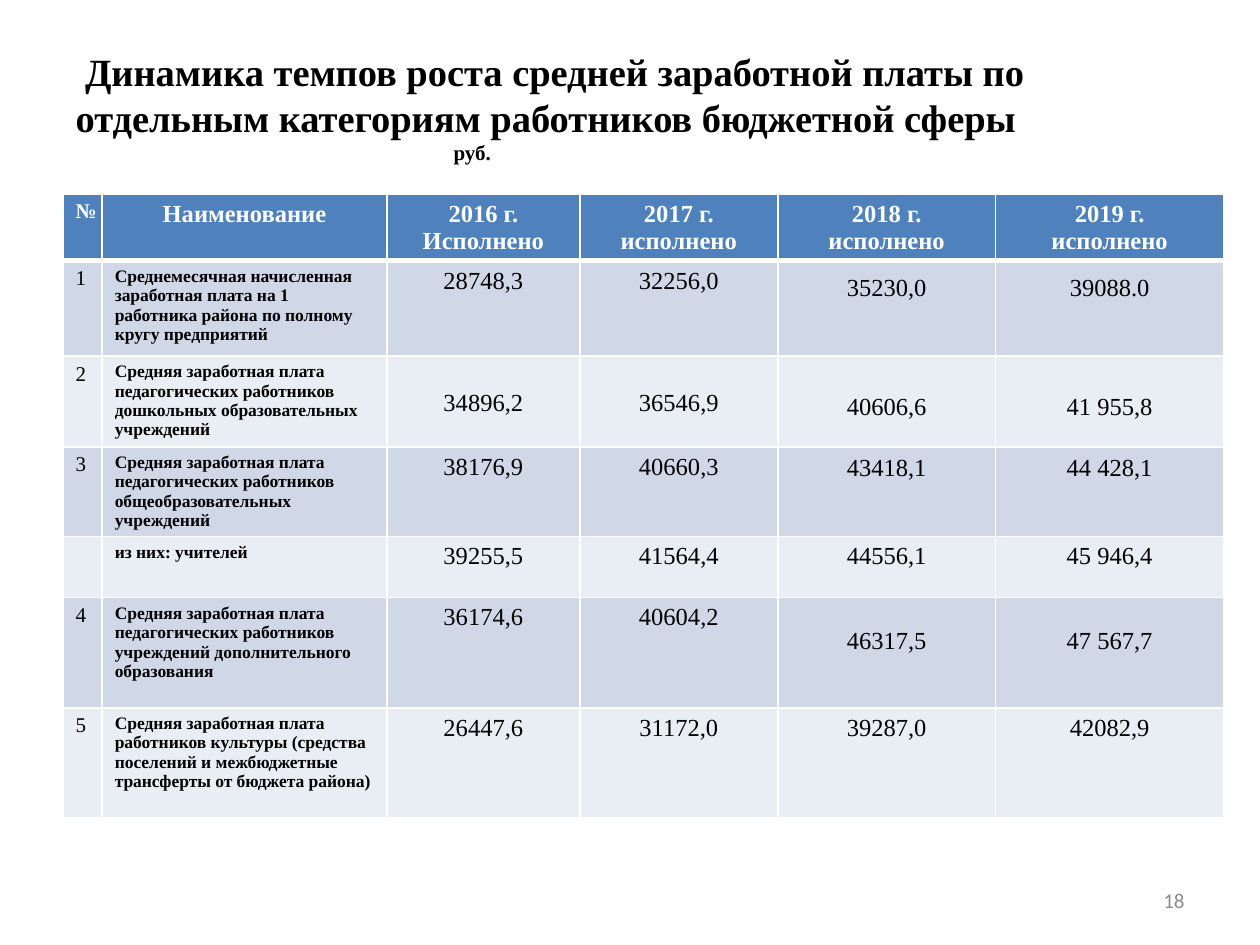
from dataclasses import dataclass
from lxml.etree import SubElement
from pptx import Presentation
from pptx.dml.color import RGBColor
from pptx.enum.text import MSO_ANCHOR, PP_ALIGN
from pptx.oxml.ns import qn
from pptx.util import Cm, Pt


@dataclass(frozen=True)
class Theme:
    serif: str = "Times New Roman"
    sans: str = "Calibri"
    ink: str = "000000"
    white: str = "FFFFFF"
    grey: str = "8C8C8C"
    head: str = "4F81BD"
    bands: tuple = ("D0D8E8", "E9EDF4")
    title: int = 22
    value: int = 14
    small: int = 12
    label: int = 10


T = Theme()
PAD = 0.13
WIDTHS = (0.79, 5.74, 3.89, 3.99, 4.39, 4.6)
HEAD_H = 1.32
HEADS = ("№", "Наименование", "2016 г. Исполнено", "2017 г. исполнено",
         "2018 г.\nисполнено", "2019 г.\nисполнено")
# Row height, top margins of the early and late years, cell texts
ROWS = (
    (1.92, PAD, 0.28, ("1", "Среднемесячная начисленная заработная плата на 1 "
     "работника района по полному кругу предприятий",
     "28748,3", "32256,0", "35230,0", "39088.0")),
    (1.83, 0.68, 0.75, ("2", "Средняя заработная плата педагогических работников "
     "дошкольных образовательных учреждений",
     "34896,2", "36546,9", "40606,6", "41 955,8")),
    (1.81, PAD, 0.15, ("3", "Средняя заработная плата педагогических работников "
     "общеобразовательных учреждений",
     "38176,9", "40660,3", "43418,1", "44 428,1")),
    (1.23, PAD, PAD, ("", "из них: учителей",
     "39255,5", "41564,4", "44556,1", "45 946,4")),
    (2.22, PAD, 0.6, ("4", "Средняя заработная плата педагогических работников "
     "учреждений дополнительного образования",
     "36174,6", "40604,2", "46317,5", "47 567,7")),
    (2.22, PAD, PAD, ("5", "Средняя заработная плата работников культуры (средства "
     "поселений и межбюджетные трансферты от бюджета района)",
     "26447,6", "31172,0", "39287,0", "42082,9")),
)


def apply(obj, form):
    for key, val in form.items():
        setattr(obj, key, val)


def write(frame, text, size, color, bold=False, align=PP_ALIGN.LEFT, face=T.serif):
    frame.text = text
    for para in frame.paragraphs:
        para.alignment = align
        for run in para.runs:
            apply(run.font, {"name": face, "size": Pt(size), "bold": bold})
            run.font.color.rgb = RGBColor.from_string(color)


def place(shape, box):
    apply(shape, dict(zip(("left", "top", "width", "height"), map(Cm, box))))


def add_title(slide, box):
    shape = slide.shapes.title
    place(shape, box)
    frame = shape.text_frame
    write(frame, "Динамика темпов роста средней заработной платы по отдельным "
          "категориям работников бюджетной сферы\nруб.", T.title, T.ink, True)
    apply(frame, {"word_wrap": True, "vertical_anchor": MSO_ANCHOR.MIDDLE})
    main, unit = frame.paragraphs
    for para, key, gap in ((main, "indent", 0.19), (unit, "marL", 7.62)):
        para._p.get_or_add_pPr().set(key, str(Cm(gap)))
        para.space_before = Pt(0)
    unit.runs[0].font.size = Pt(T.small)


def edge(cell, sides):
    props = cell._tc.get_or_add_tcPr()
    for side, width in sides.items():
        line = SubElement(props, qn(f"a:ln{side}"), w=str(Pt(width)))
        fill = SubElement(line, qn("a:solidFill"))
        SubElement(fill, qn("a:srgbClr"), val=T.white)


def paint(cell, color, top=1, bottom=1):
    edge(cell, {"L": 1, "R": 1, "T": top, "B": bottom})
    cell.fill.solid()
    cell.fill.fore_color.rgb = RGBColor.from_string(color)


def add_grid(slide, left, top):
    highs = [HEAD_H] + [row[0] for row in ROWS]
    box = map(Cm, (left, top, sum(WIDTHS), sum(highs)))
    grid = slide.shapes.add_table(len(highs), len(WIDTHS), *box).table
    grid.horz_banding = False
    for col, width in zip(grid.columns, WIDTHS):
        col.width = Cm(width)
    for row, high in zip(grid.rows, highs):
        row.height = Cm(high)

    # Header row
    for c, text in enumerate(HEADS):
        cell = grid.cell(0, c)
        paint(cell, T.head, bottom=3)
        size, align = (T.value, PP_ALIGN.CENTER) if c else (T.small, PP_ALIGN.LEFT)
        write(cell.text_frame, text, size, T.white, True, align)

    # Body rows
    for r, (_, early, late, texts) in enumerate(ROWS, 1):
        for c, text in enumerate(texts):
            cell = grid.cell(r, c)
            paint(cell, T.bands[(r - 1) % 2], top=3 if r == 1 else 1)
            if c < 2:
                write(cell.text_frame, text, (T.small, T.label)[c], T.ink, c == 1)
            else:
                cell.margin_top = Cm(early if c < 4 else late)
                write(cell.text_frame, text, T.value, T.ink, align=PP_ALIGN.CENTER)


def add_page(slide, box):
    frame = slide.shapes.add_textbox(*map(Cm, box)).text_frame
    apply(frame, {"word_wrap": True, "vertical_anchor": MSO_ANCHOR.MIDDLE})
    write(frame, "18", T.small, T.grey, align=PP_ALIGN.RIGHT, face=T.sans)


def main():
    deck = Presentation()
    apply(deck, {"slide_width": Cm(25.4), "slide_height": Cm(19.05)})
    slide = deck.slides.add_slide(deck.slide_layouts[5])
    add_title(slide, (1.27, 0.76, 20.93, 2.77))
    add_grid(slide, 1.27, 3.91)
    add_page(slide, (18.2, 17.65, 5.93, 1.01))
    deck.save("out.pptx")


if __name__ == "__main__":
    main()
